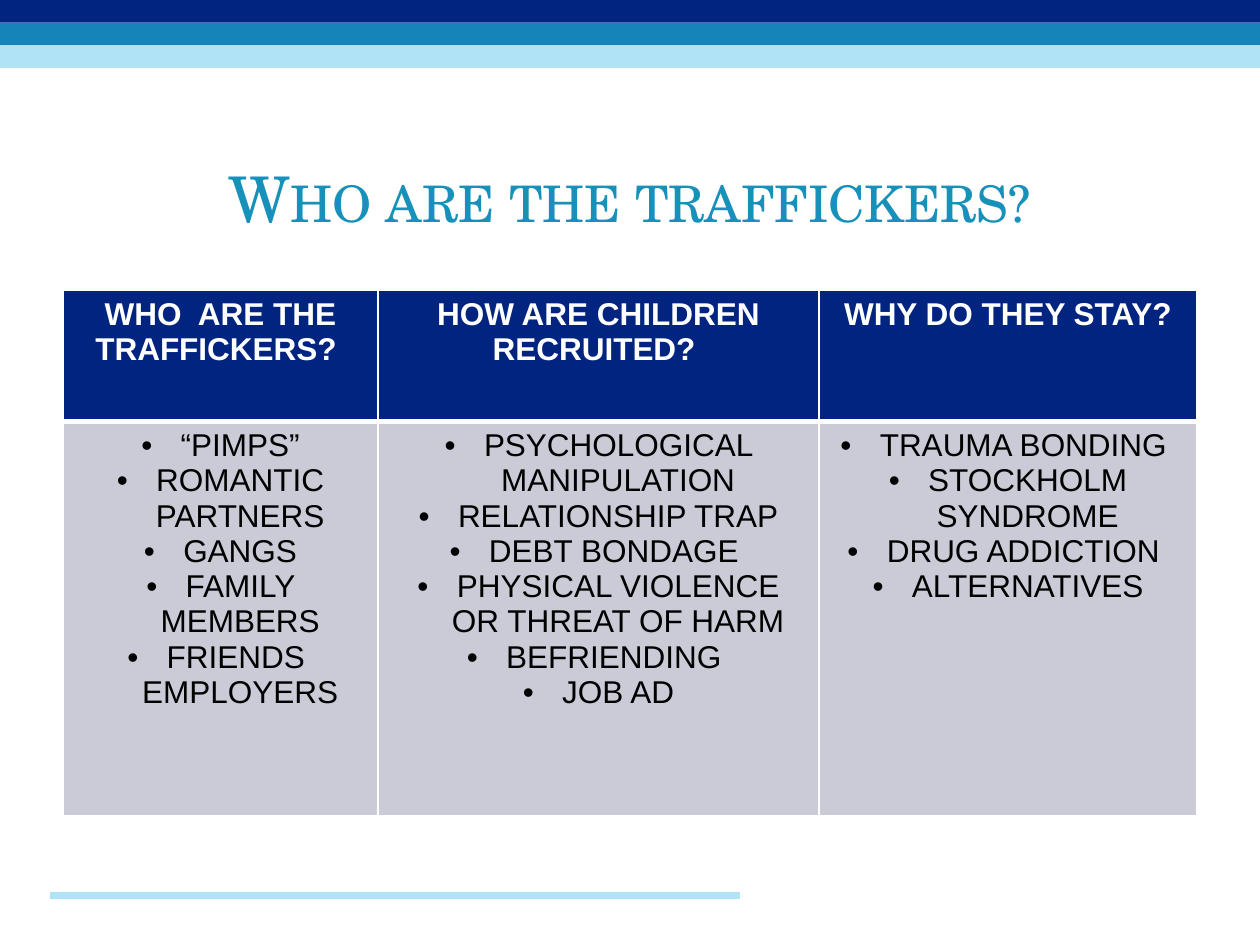
from lxml import etree
from pptx import Presentation
from pptx import util as u
from pptx.dml.color import RGBColor
from pptx.enum import shapes, text
from pptx.oxml.ns import qn

NAVY, BLUE, PALE = "00247F", "1585B9", "AFE3F5"
TITLE_BLUE, GREY, WHITE, BLACK = "1790BA", "CACBD7", "FFFFFF", "000000"
BULLET_INDENT = u.Pt(22.5)
COLUMN_WIDTHS = (180, 252, 216)
ROW_HEIGHTS = (75, 225)

# Each column: heading, bullet points
COLUMNS = [
    ("WHO  ARE THE TRAFFICKERS? ",
     ["“PIMPS”", "ROMANTIC PARTNERS", "GANGS", "FAMILY MEMBERS",
      "FRIENDS \vEMPLOYERS"]),
    ("HOW ARE CHILDREN RECRUITED? ",
     ["PSYCHOLOGICAL MANIPULATION", "RELATIONSHIP TRAP", "DEBT BONDAGE ",
      "PHYSICAL VIOLENCE OR THREAT OF HARM", "BEFRIENDING ", "JOB AD"]),
    ("WHY DO THEY STAY?",
     ["TRAUMA BONDING ", "STOCKHOLM SYNDROME", "DRUG ADDICTION ",
      "ALTERNATIVES"]),
]


def rgb(value):
    return RGBColor.from_string(value)


def style_paragraph(para, font_name, size, color, bold=False):
    para.alignment = text.PP_ALIGN.CENTER
    para.font.name = font_name
    para.font.size = u.Pt(size)
    para.font.bold = bold
    para.font.color.rgb = rgb(color)


def add_stripe(slide, top, height, color):
    stripe = slide.shapes.add_shape(
        shapes.MSO_SHAPE.RECTANGLE, 0, u.Pt(top), u.Pt(720), u.Pt(height))
    stripe.shadow.inherit = False
    stripe.fill.solid()
    stripe.fill.fore_color.rgb = rgb(color)
    stripe.line.fill.background()


def add_footer_line(slide):
    line = slide.shapes.add_connector(
        shapes.MSO_CONNECTOR.STRAIGHT,
        u.Pt(28.8), u.Pt(512), u.Pt(422.8), u.Pt(512))
    line.line.color.rgb = rgb(PALE)
    line.line.width = u.Pt(4)
    etree.SubElement(line._element.spPr, qn("a:effectLst"))


def set_title(slide, wording):
    title = slide.shapes.title
    title.left, title.top = u.Pt(36), u.Pt(87)
    title.width, title.height = u.Pt(648), u.Pt(51)
    frame = title.text_frame
    frame.text = wording
    frame.word_wrap = True
    frame.vertical_anchor = text.MSO_ANCHOR.MIDDLE
    para = frame.paragraphs[0]
    style_paragraph(para, "TeX Gyre Schola", 36, TITLE_BLUE)
    para._p.pPr.find(qn("a:defRPr")).set("cap", "small")


def add_bullet(para):
    properties = para._p.get_or_add_pPr()
    properties.set("marL", str(BULLET_INDENT))
    properties.set("indent", str(-BULLET_INDENT))
    bullet_color = etree.SubElement(properties, qn("a:buClr"))
    etree.SubElement(bullet_color, qn("a:srgbClr"), val=BLACK)
    etree.SubElement(properties, qn("a:buFont"), typeface="Arial")
    etree.SubElement(properties, qn("a:buChar"), char="•")


def set_borders(cell, **widths):
    """Draw white borders 1 pt wide, except the sides (L, R, T, B) given."""
    properties = cell._tc.get_or_add_tcPr()
    for side in "LRTB":
        width = u.Pt(widths.get(side, 1))
        border = etree.SubElement(properties, qn("a:ln" + side), w=str(width))
        fill = etree.SubElement(border, qn("a:solidFill"))
        etree.SubElement(fill, qn("a:srgbClr"), val=WHITE)


def fill_cell(cell, lines, fill, color, heading):
    set_borders(cell, **({"B": 3} if heading else {"T": 3}))
    cell.fill.solid()
    cell.fill.fore_color.rgb = rgb(fill)
    cell.text_frame.text = "\n".join(lines)
    for para in cell.text_frame.paragraphs:
        if not heading:
            add_bullet(para)
        style_paragraph(para, "Arial", 18, color, bold=heading)


def add_trafficker_table(slide):
    table = slide.shapes.add_table(
        len(ROW_HEIGHTS), len(COLUMNS), u.Pt(36), u.Pt(166),
        u.Pt(sum(COLUMN_WIDTHS)), u.Pt(sum(ROW_HEIGHTS))).table
    table.horz_banding = False
    for row, height in zip(table.rows, ROW_HEIGHTS):
        row.height = u.Pt(height)
    for index, (heading, points) in enumerate(COLUMNS):
        table.columns[index].width = u.Pt(COLUMN_WIDTHS[index])
        fill_cell(table.cell(0, index), [heading], NAVY, WHITE, True)
        fill_cell(table.cell(1, index), points, GREY, BLACK, False)


def main():
    deck = Presentation()
    deck.slide_width, deck.slide_height = u.Pt(720), u.Pt(540)
    slide = deck.slides.add_slide(deck.slide_layouts[5])
    for index, color in enumerate((NAVY, BLUE, PALE)):
        add_stripe(slide, 13 * index, 13, color)
    add_footer_line(slide)
    set_title(slide, "Who are the traffickers?")
    add_trafficker_table(slide)
    deck.save("out.pptx")


if __name__ == "__main__":
    main()
